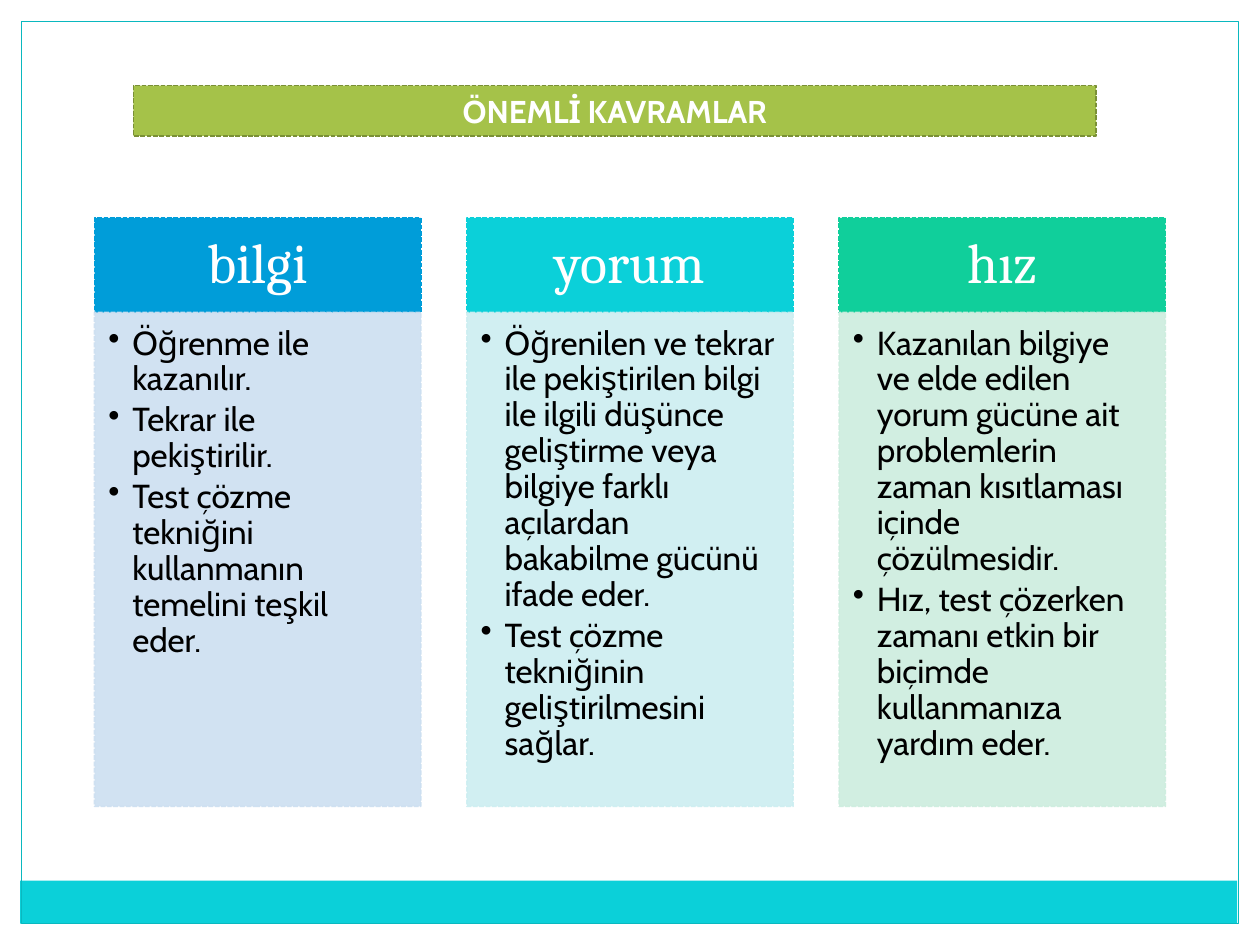
from lxml.etree import SubElement
from pptx import Presentation
from pptx.dml.color import RGBColor
from pptx.enum.dml import MSO_LINE
from pptx.enum.shapes import MSO_SHAPE
from pptx.enum.text import MSO_ANCHOR, PP_ALIGN
from pptx.oxml.ns import qn
from pptx.util import Inches, Pt

WHITE = RGBColor(0xFF, 0xFF, 0xFF)
BLACK = RGBColor(0x00, 0x00, 0x00)
CYAN = RGBColor(0x0B, 0xD0, 0xD9)
DARK_CYAN = RGBColor(0x0A, 0xB8, 0xBF)
BLUE = RGBColor(0x00, 0x9D, 0xD9)
GREEN = RGBColor(0x10, 0xCF, 0x9B)
PALE_BLUE = RGBColor(0xCC, 0xDF, 0xF1)
PALE_CYAN = RGBColor(0xCC, 0xEE, 0xF1)
PALE_GREEN = RGBColor(0xCC, 0xED, 0xDE)
OLIVE = RGBColor(0xA5, 0xC2, 0x49)
DARK_OLIVE = RGBColor(0x7A, 0x90, 0x36)

CONCEPTS = [
    ("bilgi", BLUE, PALE_BLUE, [
        "Öğrenme ile kazanılır.",
        "Tekrar ile pekiştirilir.",
        "Test çözme tekniğini kullanmanın temelini teşkil eder.",
    ]),
    ("yorum", CYAN, PALE_CYAN, [
        "Öğrenilen ve tekrar ile pekiştirilen bilgi ile ilgili düşünce "
        "geliştirme veya bilgiye farklı açılardan bakabilme gücünü ifade eder.",
        "Test çözme tekniğinin geliştirilmesini sağlar.",
    ]),
    ("hız", GREEN, PALE_GREEN, [
        "Kazanılan bilgiye ve elde edilen yorum gücüne ait problemlerin "
        "zaman kısıtlaması içinde çözülmesidir.",
        "Hız, test çözerken zamanı etkin bir biçimde kullanmanıza yardım eder.",
    ]),
]


def add_text(paragraph, text, *, font, size, color, bold=False,
             align=PP_ALIGN.CENTER, line_spacing=1.0, space_after=0):
    paragraph.alignment = align
    paragraph.line_spacing = line_spacing
    paragraph.space_after = Pt(space_after)
    run = paragraph.add_run()
    run.text = text
    run.font.name = font
    run.font.size = Pt(size)
    run.font.bold = bold
    run.font.color.rgb = color


class ConceptSlide:
    heading_font = "Cambria"
    body_font = "Cabin"
    bullet_indent = Inches(0.19)

    def __init__(self, slide):
        self.slide = slide

    def box(self, left, top, width, height, fill=None, line=None,
            line_width=0.9, dash=MSO_LINE.SQUARE_DOT, opacity=100):
        shape = self.slide.shapes.add_shape(
            MSO_SHAPE.RECTANGLE, Inches(left), Inches(top),
            Inches(width), Inches(height))
        shape.shadow.inherit = False
        if fill is None:
            shape.fill.background()
        else:
            shape.fill.solid()
            shape.fill.fore_color.rgb = fill
        if line is None:
            shape.line.fill.background()
        else:
            shape.line.color.rgb = line
            shape.line.width = Pt(line_width)
            shape.line.dash_style = dash
        if opacity < 100:
            for color in shape._element.spPr.iter(qn("a:srgbClr")):
                SubElement(color, qn("a:alpha"), val=str(opacity * 1000))
        return shape

    def frame(self, shape, anchor, left, top, right, bottom):
        frame = shape.text_frame
        frame.word_wrap = True
        frame.vertical_anchor = anchor
        frame.margin_left, frame.margin_right = Inches(left), Inches(right)
        frame.margin_top, frame.margin_bottom = Inches(top), Inches(bottom)
        return frame

    def title(self, text, *place):
        banner = self.box(*place, OLIVE, DARK_OLIVE)
        frame = self.frame(banner, MSO_ANCHOR.MIDDLE, 0.1, 0.05, 0.1, 0.05)
        add_text(frame.paragraphs[0], text, font=self.body_font, size=18,
                 color=WHITE, bold=True)

    def heading(self, text, color, *place):
        header = self.box(*place, color, color)
        frame = self.frame(header, MSO_ANCHOR.MIDDLE, 0.25, 0.14, 0.25, 0.14)
        add_text(frame.paragraphs[0], text, font=self.heading_font, size=32,
                 color=WHITE, line_spacing=0.9)

    def bullets(self, points, color, *place):
        panel = self.box(*place, color, color, opacity=90)
        frame = self.frame(panel, MSO_ANCHOR.TOP, 0.11, 0.11, 0.15, 0.17)
        for index, point in enumerate(points):
            paragraph = frame.add_paragraph() if index else frame.paragraphs[0]
            add_text(paragraph, point, font=self.body_font, size=19,
                     color=BLACK, align=PP_ALIGN.LEFT, line_spacing=0.9,
                     space_after=2.85)
            properties = paragraph._p.get_or_add_pPr()
            properties.set("marL", str(self.bullet_indent))
            properties.set("indent", str(-self.bullet_indent))
            SubElement(properties, qn("a:buChar"), char="•")


def main():
    presentation = Presentation()
    presentation.slide_width = Inches(10)
    presentation.slide_height = Inches(7.5)
    page = ConceptSlide(
        presentation.slides.add_slide(presentation.slide_layouts[6]))

    # Footer band and page border
    page.box(0.16, 6.99, 9.66, 0.34, CYAN)
    page.box(0.17, 0.17, 9.66, 7.16, line=DARK_CYAN, line_width=0.75,
             dash=MSO_LINE.SOLID)

    # Concept columns, spread evenly between the side margins
    margin, width = 0.75, 2.59
    top, header_height, body_height = 1.73, 0.75, 3.92
    pitch = (10 - 2 * margin - width) / (len(CONCEPTS) - 1)
    for index, (name, strong, pale, points) in enumerate(CONCEPTS):
        left = margin + index * pitch
        page.heading(name, strong, left, top, width, header_height)
        page.bullets(points, pale, left, top + header_height, width, body_height)

    # Title banner
    page.title("ÖNEMLİ KAVRAMLAR", 1.06, 0.68, 7.64, 0.4)

    presentation.save("out.pptx")


if __name__ == "__main__":
    main()
